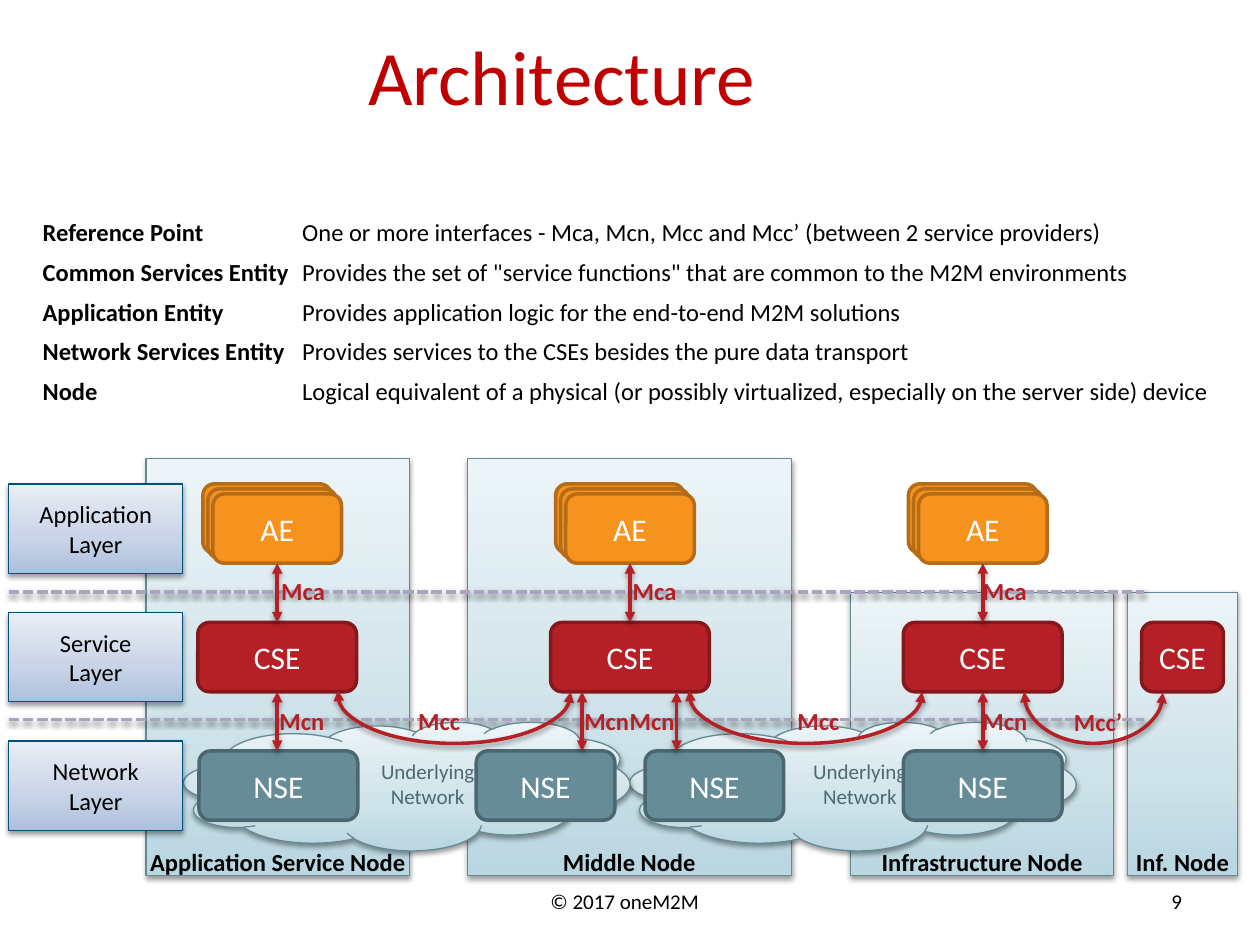
from copy import deepcopy

from lxml import etree
from pptx import Presentation
from pptx.dml.color import RGBColor
from pptx.enum.dml import MSO_LINE
from pptx.enum.shapes import MSO_CONNECTOR, MSO_SHAPE
from pptx.enum.text import MSO_ANCHOR, PP_ALIGN
from pptx.oxml import parse_xml
from pptx.oxml.ns import nsdecls, qn
from pptx.util import Inches, Pt

RECT, ROUND = MSO_SHAPE.RECTANGLE, MSO_SHAPE.ROUNDED_RECTANGLE
CLOUD, ARC = MSO_SHAPE.CLOUD, MSO_SHAPE.ARC
LINE, DASH = MSO_CONNECTOR.STRAIGHT, MSO_LINE.SQUARE_DOT
TOP, MID = MSO_ANCHOR.TOP, MSO_ANCHOR.MIDDLE
LEFT, MIDST, RIGHT = PP_ALIGN.LEFT, PP_ALIGN.CENTER, PP_ALIGN.RIGHT

THEME = {
    "font": "Calibri",
    "black": "000000", "white": "FFFFFF", "title": "C00000",
    "red": "B42025", "wine": "85181B",
    "orange": "F6921E", "brown": "B66C16",
    "slate": "668C97", "deep": "4B6870", "muted": "4C6971",
    "rim": "638A95", "navy": "00527D", "dash": "AAA4C0",
    "pale": ("B9D6E1", "CEE2E9", "ECF4F7"),
    "blue": ("ADBFDD", "C6D2E6", "E9EEF6"),
    "head": 44, "name": 18, "body": 14, "small": 12,
}
PLAIN, FLAT = (0.1, 0.05, 0.1, 0.05), (0, 0, 0, 0)

deck = Presentation()
deck.slide_width, deck.slide_height = Inches(10), Inches(7.5)
slide = deck.slides.add_slide(deck.slide_layouts[6])
shapes = slide.shapes


def trim(item, tint, width, heads=False, shade=True, dash=None):
    item.line.color.rgb = RGBColor.from_string(THEME[tint])
    item.line.width = Pt(width)
    if dash:
        item.line.dash_style = dash
    props = item._element.spPr
    if heads:
        for tag in ("a:headEnd", "a:tailEnd"):
            etree.SubElement(props.find(qn("a:ln")), qn(tag), type="triangle")
    glow = (
        '<a:outerShdw blurRad="39370" dist="20320" dir="5400000" rotWithShape="0">'
        '<a:srgbClr val="000000"><a:alpha val="38000"/></a:srgbClr></a:outerShdw>'
    ) if shade else ""
    props.append(parse_xml(f'<a:effectLst {nsdecls("a")}>{glow}</a:effectLst>'))


def place(box, text="", size="body", tint="black", kind=None, fill=None,
          bold=False, pad=PLAIN, anchor=MID, align=MIDST, wrap=True):
    area = [Inches(n) for n in box]
    item = shapes.add_shape(kind, *area) if kind else shapes.add_textbox(*area)
    if isinstance(fill, tuple):
        item.fill.gradient()
        item.fill.gradient_angle = 90
        first = item._element.spPr.find(".//" + qn("a:gs"))
        first.addnext(deepcopy(first))
        for stop, spot, hue in zip(item.fill.gradient_stops, (0, 0.35, 1), fill):
            stop.position = spot
            stop.color.rgb = RGBColor.from_string(hue)
    elif fill:
        item.fill.solid()
        item.fill.fore_color.rgb = RGBColor.from_string(fill)
    elif kind:
        item.fill.background()
    frame = item.text_frame
    frame.word_wrap, frame.vertical_anchor = wrap, anchor
    (frame.margin_left, frame.margin_top,
     frame.margin_right, frame.margin_bottom) = [Inches(n) for n in pad]
    para = frame.paragraphs[0]
    para.alignment = align
    for spot, part in enumerate(text.split("\n") if text else []):
        if spot:
            para.add_line_break()
        run = para.add_run()
        run.text = part
        run.font.name, run.font.size = THEME["font"], Pt(THEME[size])
        run.font.bold = bold
        run.font.color.rgb = RGBColor.from_string(THEME[tint])
    return item


place((4.27, 7, 1.4, 0.3), "© 2017 oneM2M", "small", anchor=TOP, align=LEFT, wrap=False)
place((9.08, 7, 0.4, 0.3), "9", "small", anchor=TOP, align=RIGHT, wrap=False)

base = 6.95
nodes = [
    ("Inf. Node", 8.95, 4.7, 0.87),
    ("Application Service Node", 1.16, 3.64, 2.09),
    ("Middle Node", 3.71, 3.64, 2.57),
    ("Infrastructure Node", 6.75, 4.7, 2.09),
]
for name, left, top, width in nodes:
    node = place((left, top, width, base - top), kind=RECT, fill=THEME["pale"])
    trim(node, "rim", 0.75)

for row in (5.71, 4.7):
    rule = shapes.add_connector(LINE, Inches(0.07), Inches(row), Inches(9.08), Inches(row))
    trim(rule, "dash", 2, dash=DASH)

for left, inset in ((5, 0.46), (1.46, 0.68)):
    cloud = place((left, 5.73, 3.54, 1.02), "Underlying\nNetwork", "small", "muted",
                  CLOUD, THEME["pale"], pad=(inset, 0.05, 0.1, 0.05))
    trim(cloud, "rim", 0.75)

cores = [2.2 + 2.8 * n for n in range(3)]
tall = 0.55
boxes = []
for core in cores:
    for step, name in enumerate(("", "", "AE")):
        shift = 0.04 * step
        boxes.append((name, core - 0.59 + shift, 3.84 + shift, 1.02, "orange", "brown"))
    boxes.append(("CSE", core - 0.63, 4.94, 1.26, "red", "wine"))
boxes.append(("CSE", 9.06, 4.94, 0.65, "red", "wine"))
for left, width in ((1.58, 1.26), (3.78, 1.1), (5.12, 1.1), (7.17, 1.26)):
    boxes.append(("NSE", left, 5.96, width, "slate", "deep"))
for name, left, top, width, fill, edge in boxes:
    box = place((left, top, width, tall), name, "name", "white", ROUND, THEME[fill])
    trim(box, edge, 2, shade=False)

links = [(core, 4.94, 4.47) for core in cores]
links += [(left, 5.96, 5.49) for left in (2.2, 4.62, 5.37, 7.8)]
for left, low, high in links:
    link = shapes.add_connector(LINE, Inches(left), Inches(low), Inches(left), Inches(high))
    trim(link, "red", 2, heads=True)

for name, left, top, width in nodes:
    place((left, 6.72, width, 0.24), name, bold=True, pad=FLAT, anchor=TOP)

for row, name in enumerate(("Application", "Service", "Network")):
    layer = place((0.07, 3.84 + 1.02 * row, 1.38, 0.71), name + "\nLayer", kind=RECT,
                  fill=THEME["blue"], pad=(0.04, 0.05, 0.04, 0.05))
    trim(layer, "navy", 0.75)

for left, width in ((2.68, 1.85), (5.47, 1.85), (8.13, 1.1)):
    arc = place((left, 5.11, width, 0.79), kind=ARC)
    arc.adjustments[0], arc.adjustments[1] = 215.51, 108.94
    trim(arc, "red", 2, heads=True)

labels = [
    ("Mca", 4.57, (2.21, 5, 7.78)),
    ("Mcn", 5.6, (2.2, 4.62, 4.98, 7.78)),
    ("Mcc", 5.6, (3.29, 6.3)),
    ("Mcc’", 5.61, (8.52,)),
]
for name, top, lefts in labels:
    for left in lefts:
        place((left, top, 0.39, 0.24), name, tint="red", bold=True, pad=FLAT)

terms = [
    ("Reference Point",
     "One or more interfaces - Mca, Mcn, Mcc and Mcc’ (between 2 service providers)"),
    ("Common Services Entity",
     'Provides the set of "service functions" that are common to the M2M environments'),
    ("Application Entity", "Provides application logic for the end-to-end M2M solutions"),
    ("Network Services Entity", "Provides services to the CSEs besides the pure data transport"),
    ("Node", "Logical equivalent of a physical (or possibly virtualized, "
     "especially on the server side) device"),
]
frame = place((0.24, 1.67, 9.53, 1.88), anchor=TOP, align=LEFT).text_frame
for row, (term, gloss) in enumerate(terms):
    para = frame.add_paragraph() if row else frame.paragraphs[0]
    para.space_after = Pt(6)
    tabs = etree.SubElement(para._p.get_or_add_pPr(), qn("a:tabLst"))
    etree.SubElement(tabs, qn("a:tab"), pos=str(Inches(2.06)), algn="l")
    for text, bold in ((term, True), ("\t" + gloss, False)):
        run = para.add_run()
        run.text = text
        run.font.name, run.font.size = THEME["font"], Pt(THEME["body"])
        run.font.bold = bold
        run.font.color.rgb = RGBColor.from_string(THEME["black"])

place((0.5, 0.3, 7.92, 1.25), "Architecture", "head", "title", pad=(0.1, 0, 0.1, 0.66))

deck.save("out.pptx")
